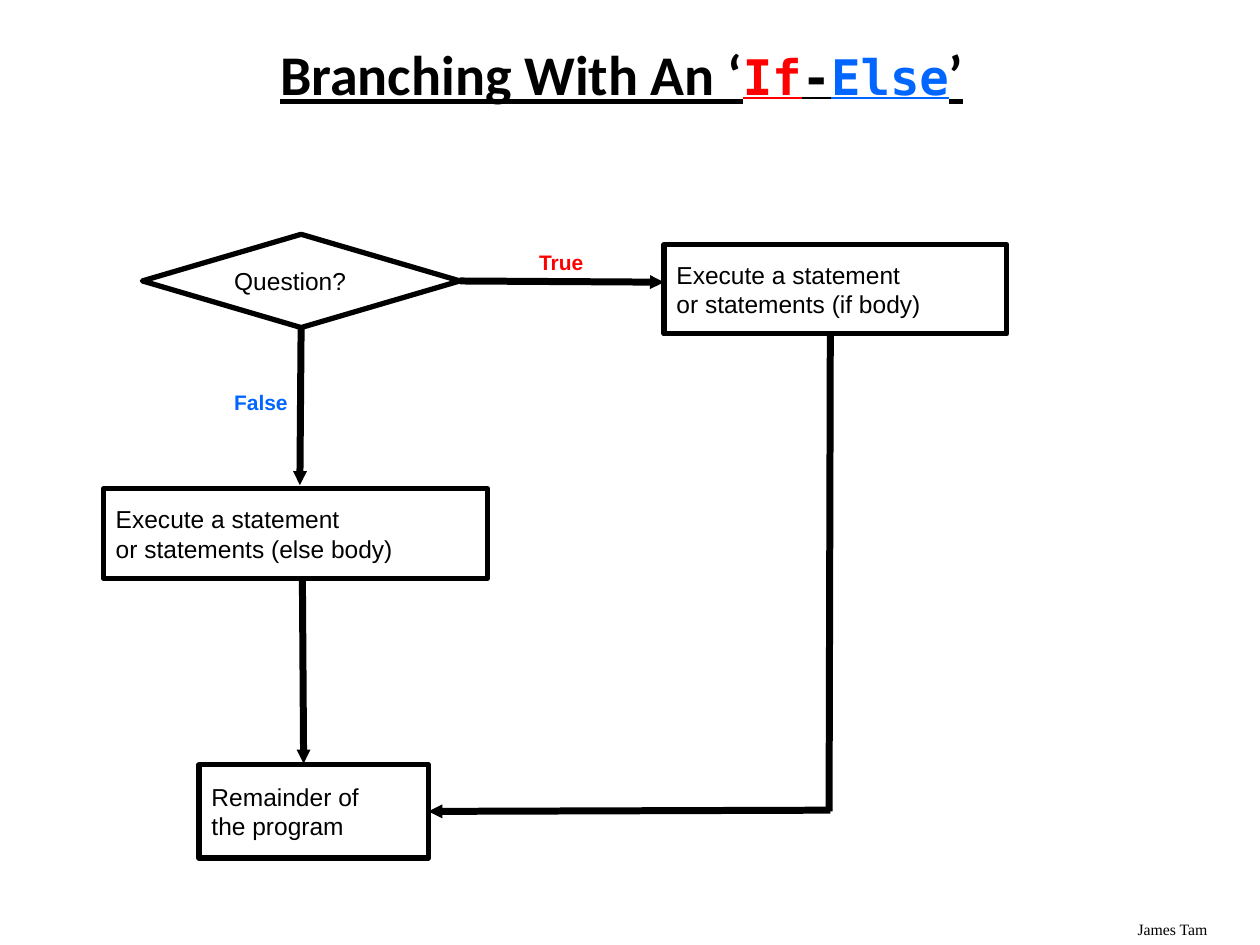
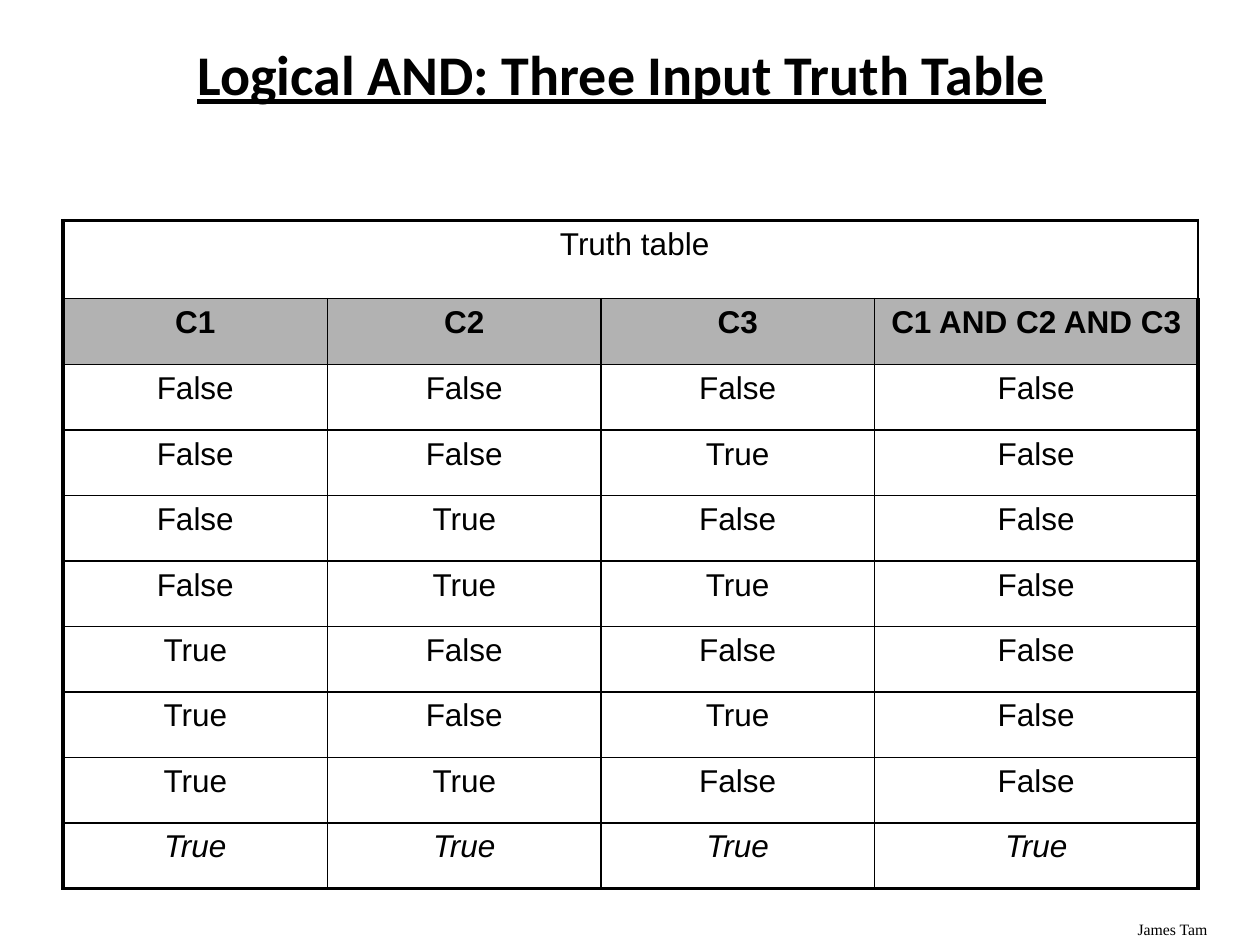
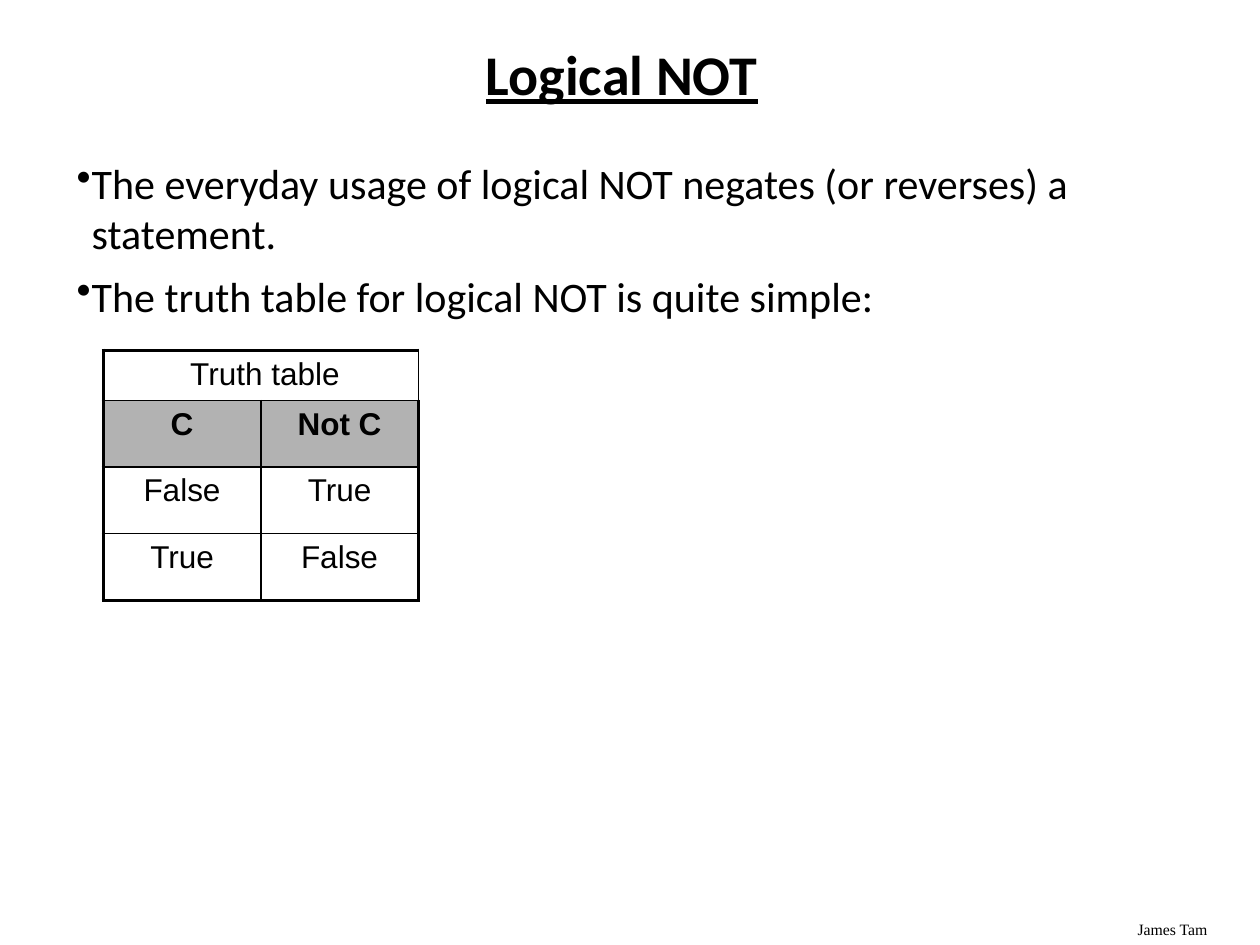
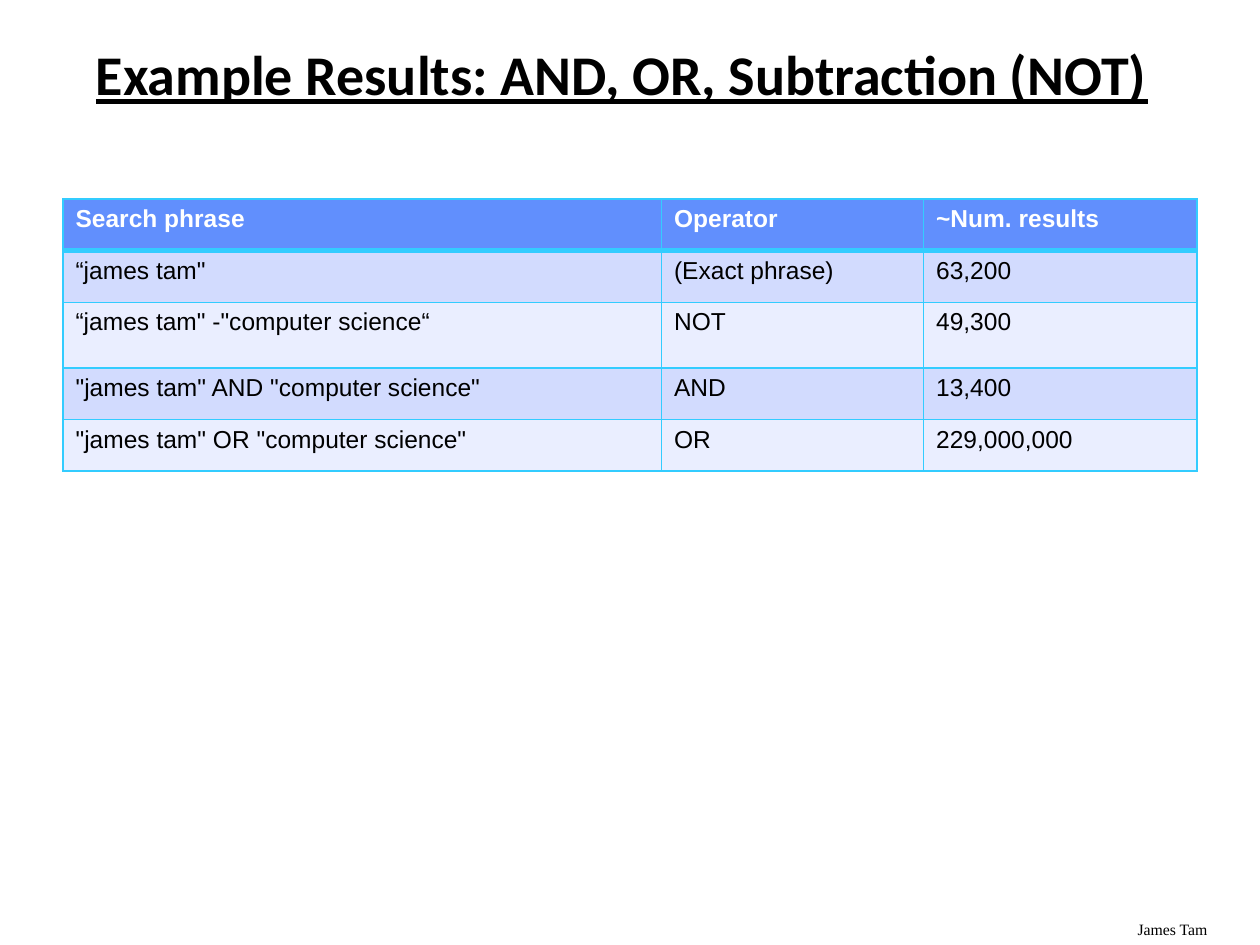
"""Build four slides on branching, truth tables and search results."""
from dataclasses import dataclass, field
from itertools import product

from lxml import etree
from pptx import Presentation
from pptx.dml.color import RGBColor
from pptx.enum.shapes import MSO_CONNECTOR, MSO_SHAPE
from pptx.enum.text import MSO_ANCHOR, MSO_AUTO_SIZE, PP_ALIGN
from pptx.oxml.ns import qn
from pptx.util import Inches, Pt

STRAIGHT = MSO_CONNECTOR.STRAIGHT
RECT, DIAMOND = MSO_SHAPE.RECTANGLE, MSO_SHAPE.DIAMOND
TOP, MIDDLE = MSO_ANCHOR.TOP, MSO_ANCHOR.MIDDLE
LEFT, CENTER = PP_ALIGN.LEFT, PP_ALIGN.CENTER
FIXED = MSO_AUTO_SIZE.NONE
BOTTOM_SIDE, RIGHT_SIDE = 2, 3

BLACK = RGBColor(0x00, 0x00, 0x00)
WHITE = RGBColor(0xFF, 0xFF, 0xFF)
RED = RGBColor(0xFF, 0x00, 0x00)
BLUE = RGBColor(0x00, 0x66, 0xFF)
GRAY = RGBColor(0xB2, 0xB2, 0xB2)
CYAN = RGBColor(0x33, 0xCC, 0xFF)
HEAD = RGBColor(0x61, 0x8F, 0xFD)
DARK = RGBColor(0xD2, 0xDB, 0xFE)
LIGHT = RGBColor(0xEA, 0xEE, 0xFF)

TITLE = dict(name="Calibri", size=Pt(32), bold=True, underline=True, color=BLACK)
CODE = TITLE | dict(name="DejaVu Sans Mono", size=Pt(28))
BODY = dict(name="Calibri", size=Pt(24), color=BLACK)
FOOT = dict(name="Times New Roman", size=Pt(9), color=BLACK)
FLOW = dict(name="Arial", size=Pt(14), color=BLACK)
TAG = dict(name="Arial", size=Pt(12), bold=True)
TRUTH = dict(name="Arial", size=Pt(18), color=BLACK)
STRONG = TRUTH | dict(bold=True)
SLANT = TRUTH | dict(italic=True)
HEADER = FLOW | dict(bold=True, color=WHITE)


@dataclass
class Box:
    """A bordered shape of the flow chart."""
    kind: int
    at: tuple
    lines: tuple


@dataclass
class Arrow:
    """A thick line, with an optional head and joined ends."""
    start: tuple
    end: tuple
    head: bool = True
    source: tuple = ()
    target: tuple = ()


@dataclass
class Row:
    """A table row with one look."""
    height: float
    texts: tuple
    font: dict
    fill: RGBColor | None = None


@dataclass
class Grid:
    """A table with line widths listed from top to bottom and left to right."""
    at: tuple
    cols: tuple
    rows: list
    across: list
    down: list
    color: RGBColor = BLACK
    align: int = CENTER
    caption: bool = True


@dataclass
class Page:
    """A slide's title runs and its content."""
    title: list
    boxes: list = field(default_factory=list)
    arrows: list = field(default_factory=list)
    tags: list = field(default_factory=list)
    bullets: tuple = ()
    grid: Grid | None = None


def place(values: tuple) -> list:
    """Turn numbers into lengths."""
    return [Inches(value) for value in values]


def write(par, text: str, look: dict) -> None:
    """Add one formatted run."""
    run = par.add_run()
    run.text = text
    for key, value in look.items():
        if key == "color":
            run.font.color.rgb = value
        else:
            setattr(run.font, key, value)


def fill_text(frame, lines: tuple, look: dict, anchor=TOP) -> None:
    """Write one paragraph per line."""
    for key, value in dict(word_wrap=True, auto_size=FIXED, vertical_anchor=anchor).items():
        setattr(frame, key, value)
    for index, line in enumerate(lines):
        par = frame.add_paragraph() if index else frame.paragraphs[0]
        par.alignment = LEFT
        write(par, line, look)


def add_text(slide, at: tuple, lines: tuple, look: dict):
    """Add a text box and return its frame."""
    frame = slide.shapes.add_textbox(*place(at)).text_frame
    fill_text(frame, lines, look)
    return frame


def add_title(slide, runs: list) -> None:
    """Move and fill the title placeholder."""
    title = slide.shapes.title
    title.left, title.top, title.width, title.height = place((0.47, 0.33, 8.93, 0.57))
    frame = title.text_frame
    frame.auto_size, frame.vertical_anchor = FIXED, MIDDLE
    par = frame.paragraphs[0]
    par.alignment, par.line_spacing = CENTER, 0.9
    for text, look in runs:
        write(par, text, look)


def add_box(slide, box: Box):
    """Draw a flow chart shape."""
    shape = slide.shapes.add_shape(box.kind, *place(box.at))
    shape.shadow.inherit = False
    shape.fill.background()
    shape.line.color.rgb, shape.line.width = BLACK, Pt(3)
    fill_text(shape.text_frame, box.lines, FLOW, MIDDLE)
    return shape


def add_arrow(slide, arrow: Arrow, shapes: list) -> None:
    """Draw a line and join the ends that meet a shape."""
    link = slide.shapes.add_connector(STRAIGHT, *place(arrow.start + arrow.end))
    if arrow.source:
        link.begin_connect(shapes[arrow.source[0]], arrow.source[1])
    if arrow.target:
        link.end_connect(shapes[arrow.target[0]], arrow.target[1])
    link.line.color.rgb, link.line.width = BLACK, Pt(4)
    props = link.element.spPr
    if arrow.head:
        etree.SubElement(props.find(qn("a:ln")), qn("a:tailEnd"),
                         type="triangle", w="sm", len="sm")
    etree.SubElement(props, qn("a:effectLst"))


def add_bullets(slide, lines: tuple) -> None:
    """Write the bulleted body."""
    frame = add_text(slide, (0.51, 1.2, 8.94, 5.87), lines, BODY)
    for index, par in enumerate(frame.paragraphs):
        par.space_before = Pt(7 if index else 0)
        props = par._p.get_or_add_pPr()
        props.set("marL", str(Inches(0.12)))
        props.set("indent", str(Inches(-0.12)))
        etree.SubElement(props, qn("a:buChar"), char="•")


def add_edges(cell, widths: dict, color: RGBColor) -> None:
    """Draw the four borders of a cell."""
    props = cell._tc.get_or_add_tcPr()
    for side, width in widths.items():
        line = etree.SubElement(props, qn(f"a:ln{side}"), w=str(Pt(width)))
        solid = etree.SubElement(line, qn("a:solidFill"))
        etree.SubElement(solid, qn("a:srgbClr"), val=str(color))


def add_grid(slide, grid: Grid) -> None:
    """Build a table with its borders, fills and text."""
    heights = [row.height for row in grid.rows]
    size = (sum(grid.cols), sum(heights))
    table = slide.shapes.add_table(len(heights), len(grid.cols), *place(grid.at + size)).table
    table.first_row = table.horz_banding = False
    for col, width in zip(table.columns, grid.cols):
        col.width = Inches(width)
    for r, row in enumerate(grid.rows):
        table.rows[r].height = Inches(row.height)
        for c in range(len(grid.cols)):
            cell = table.cell(r, c)
            add_edges(cell, dict(L=grid.down[c], R=grid.down[c + 1],
                                 T=grid.across[r], B=grid.across[r + 1]), grid.color)
            if row.fill is None:
                cell.fill.background()
            else:
                cell.fill.solid()
                cell.fill.fore_color.rgb = row.fill
        for c, text in enumerate(row.texts):
            par = table.cell(r, c).text_frame.paragraphs[0]
            par.alignment = grid.align
            write(par, text, row.font)
    if grid.caption:
        table.cell(0, 0).merge(table.cell(0, len(grid.cols) - 1))


def rim(count: int) -> list:
    """Give line widths with thick outer lines."""
    return [2.25] + [1] * (count - 1) + [2.25]


def truth_grid(at: tuple, cols: tuple, top: float, heads: tuple, body: list) -> Grid:
    """Put a caption and a header over truth rows."""
    rows = [Row(top, (" Truth table",), TRUTH), Row(0.525, heads, STRONG, GRAY), *body]
    return Grid(at, cols, rows, rim(len(rows)), rim(len(cols)))


def add_page(deck, page: Page) -> None:
    """Add one slide."""
    slide = deck.slides.add_slide(deck.slide_layouts[5])
    add_text(slide, (8.93, 7.25, 1, 0.25), ("James Tam",), FOOT)
    add_title(slide, page.title)
    shapes = [add_box(slide, box) for box in page.boxes]
    for arrow in page.arrows:
        add_arrow(slide, arrow, shapes)
    for at, text, color in page.tags:
        add_text(slide, at, (text,), TAG | dict(color=color))
    if page.bullets:
        add_bullets(slide, page.bullets)
    if page.grid:
        add_grid(slide, page.grid)


def branch_page() -> Page:
    """Describe the flow chart."""
    title = [("Branching With An ‘", TITLE), ("If", CODE | dict(color=RED)), ("-", CODE),
             ("Else", CODE | dict(color=BLUE)), ("’", TITLE)]
    boxes = [
        Box(DIAMOND, (1.13, 1.86, 2.52, 0.74), ("Question?",)),
        Box(RECT, (5.27, 1.94, 2.72, 0.71), ("Execute a statement", "or statements (if body)")),
        Box(RECT, (0.82, 3.88, 3.05, 0.71), ("Execute a statement", "or statements (else body)")),
        Box(RECT, (1.58, 6.07, 1.82, 0.74), ("Remainder of", "the program")),
    ]
    arrows = [
        Arrow((3.66, 2.23), (5.27, 2.24), source=(0, RIGHT_SIDE)),
        Arrow((2.4, 2.6), (2.38, 3.85), source=(0, BOTTOM_SIDE)),
        Arrow((6.59, 6.43), (3.4, 6.44), target=(3, RIGHT_SIDE)),
        Arrow((6.59, 2.65), (6.58, 6.44), head=False),
        Arrow((2.4, 4.61), (2.41, 6.06)),
    ]
    tags = [((4.18, 1.93, 0.65, 0.31), "True", RED), ((1.76, 3.04, 0.73, 0.31), "False", BLUE)]
    return Page(title, boxes, arrows, tags)


def and_page() -> Page:
    """Describe the three input table."""
    body = [Row(0.52, tuple(map(str, (*bits, all(bits)))), SLANT if all(bits) else TRUTH)
            for bits in product((False, True), repeat=3)]
    grid = truth_grid((0.5, 1.75), (2.1, 2.17, 2.17, 2.57), 0.62,
                      ("C1", "C2", "C3", "C1 AND C2 AND C3"), body)
    return Page([("Logical AND: Three Input Truth Table", TITLE)], grid=grid)


def not_page() -> Page:
    """Describe the negation table."""
    body = [Row(0.53, (str(bit), str(not bit)), TRUTH) for bit in (False, True)]
    return Page(
        [("Logical NOT", TITLE)],
        bullets=("The everyday usage of logical NOT negates (or reverses) a statement.",
                 "The truth table for logical NOT is quite simple:"),
        grid=truth_grid((0.82, 2.78), (1.25, 1.25), 0.4, ("C", "Not C"), body))


def search_page() -> Page:
    """Describe the search results."""
    rows = [
        Row(0.41, ("Search phrase", "Operator", "~Num. results"), HEADER, HEAD),
        Row(0.41, ("“james tam\"", "(Exact phrase)", "63,200"), FLOW, DARK),
        Row(0.52, ("“james tam\" -\"computer science“", "NOT", "49,300"), FLOW, LIGHT),
        Row(0.41, ("\"james tam\" AND \"computer science\"", "AND", "13,400"), FLOW, DARK),
        Row(0.41, ("\"james tam\" OR \"computer science\"", "OR", "229,000,000"), FLOW, LIGHT),
    ]
    grid = Grid((0.5, 1.58), (4.75, 2.08, 2.17), rows, [1, 3, 1, 1, 1, 1], [1] * 4,
                CYAN, LEFT, caption=False)
    return Page([("Example Results: AND, OR, Subtraction (NOT)", TITLE)], grid=grid)


def main() -> None:
    """Build and save the deck."""
    deck = Presentation()
    deck.slide_width, deck.slide_height = Inches(10), Inches(7.5)
    for page in (branch_page(), and_page(), not_page(), search_page()):
        add_page(deck, page)
    deck.save("out.pptx")


if __name__ == "__main__":
    main()
